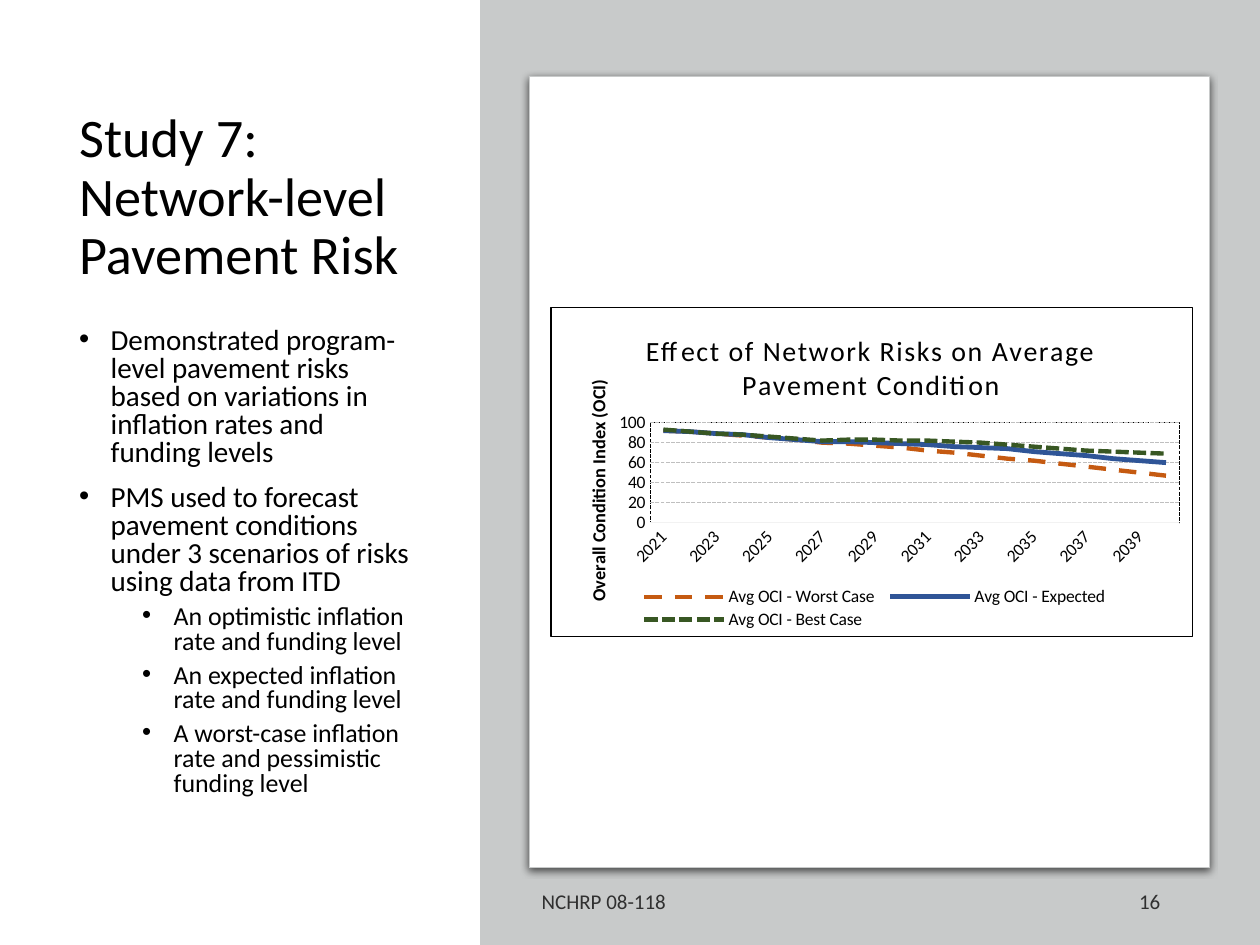
import collections

import lxml.etree
import pptx
import pptx.chart.data
import pptx.dml.color
import pptx.enum.chart
import pptx.enum.dml
import pptx.enum.shapes
import pptx.enum.text
import pptx.oxml
import pptx.oxml.ns
import pptx.util

Color = pptx.dml.color.RGBColor
BLACK = Color(0x00, 0x00, 0x00)
WHITE = Color(0xFF, 0xFF, 0xFF)
PANEL = Color(0xC8, 0xCA, 0xCA)
FOOTER = Color(0x30, 0x30, 0x30)
GRID_LINE = Color(0xBF, 0xBF, 0xBF)
AXIS_LINE = Color(0xF2, 0xF2, 0xF2)
ORANGE = Color(0xC5, 0x5A, 0x11)
BLUE = Color(0x2F, 0x55, 0x97)
GREEN = Color(0x38, 0x57, 0x23)

FONT = "Calibri"
CELL = 0.1
Box = collections.namedtuple("Box", "left top width height")
Dash = pptx.enum.dml.MSO_LINE
Anchor = pptx.enum.text.MSO_ANCHOR
Align = pptx.enum.text.PP_ALIGN

BULLETS = [
    (0, "Demonstrated program-level pavement risks based on variations in inflation rates and funding levels"),
    (0, "PMS used to forecast pavement conditions under 3 scenarios of risks using data from ITD"),
    (1, "An optimistic inflation rate and funding level"),
    (1, "An expected inflation rate and funding level"),
    (1, "A worst-case inflation rate and pessimistic funding level"),
]
SERIES = [
    ("Avg OCI - Worst Case", ORANGE, 2.5, Dash.DASH,
     [92, 91, 89, 87, 85, 83, 80, 79, 77, 75, 72, 70, 67, 64, 62, 59, 56, 53, 50, 47]),
    ("Avg OCI - Expected", BLUE, 2.75, Dash.SOLID,
     [92, 91, 89, 88, 85, 83, 81, 81, 80, 79, 78, 76, 75, 74, 71, 69, 67, 64, 62, 60]),
    ("Avg OCI - Best Case", GREEN, 2.5, Dash.SQUARE_DOT,
     [93, 91, 89, 88, 86, 84, 82, 83, 83, 82, 82, 81, 80, 78, 76, 74, 72, 71, 70, 69]),
]


def inside(box, left, top, width, height):
    """Return the box given by shares of another box."""
    return Box(box.left + left * box.width, box.top + top * box.height,
               width * box.width, height * box.height)


def lengths(box):
    """Turn grid columns and rows into slide lengths."""
    return [pptx.util.Inches(value * CELL) for value in box]


def parse_xml(text):
    """Parse markup that uses the chart and drawing prefixes."""
    names = pptx.oxml.ns.nsdecls("a", "c")
    return pptx.oxml.parse_xml(text.replace(">", f" {names}>", 1))


def format_font(font, size, color=BLACK, bold=False):
    """Set the face, size, colour and weight of a font."""
    font.name, font.size, font.bold = FONT, pptx.util.Pt(size), bold
    font.color.rgb = color


def add_text(page, box, lines, sizes, color=BLACK, anchor=Anchor.TOP, align=Align.LEFT,
             spacing=1.0, before=(0, 0), bullets=False):
    """Add a text box whose lines are pairs of level and wording."""
    frame = page.shapes.add_textbox(*lengths(box)).text_frame
    frame.word_wrap, frame.vertical_anchor = True, anchor
    for index, (level, words) in enumerate(lines):
        para = frame.paragraphs[0] if index == 0 else frame.add_paragraph()
        para.level, para.alignment, para.line_spacing = level, align, spacing
        para.space_before = pptx.util.Pt(before[level])
        span = para.add_run()
        span.text = words
        format_font(span.font, sizes[level], color)
        if bullets:
            properties = para._p.get_or_add_pPr()
            properties.set("marL", str(pptx.util.Inches(0.25 + 0.5 * level)))
            properties.set("indent", str(pptx.util.Inches(-0.25)))
            for mark in ('<a:buFont typeface="Arial"></a:buFont>', '<a:buChar char="•"></a:buChar>'):
                properties.append(parse_xml(mark))


def add_card(page, box, fill, kind, line=None):
    """Add a plain filled shape with an optional outline."""
    card = page.shapes.add_shape(kind, *lengths(box))
    card.shadow.inherit = False
    card.fill.solid()
    card.fill.fore_color.rgb = fill
    if line is None:
        card.line.fill.background()
    else:
        card.line.color.rgb, card.line.width = line, pptx.util.Pt(0.75)
    return card


def add_shadow(card):
    """Give a card a soft shadow below it."""
    effects = card._element.spPr.find(pptx.oxml.ns.qn("a:effectLst"))
    effects.append(parse_xml(
        '<a:outerShdw blurRad="57150" dist="19050" dir="5400000" algn="ctr" rotWithShape="0">'
        '<a:srgbClr val="000000"><a:alpha val="63000"/></a:srgbClr></a:outerShdw>'))


def set_layout(part, inner=False, **shares):
    """Place a chart part by shares of the chart."""
    target = '<c:layoutTarget val="inner"/>' if inner else ""
    modes = "".join(f'<c:{key}Mode val="edge"/>' for key in ("x", "y"))
    values = "".join(f'<c:{key} val="{value}"/>' for key, value in shares.items())
    layout = parse_xml(f"<c:layout><c:manualLayout>{target}{modes}{values}</c:manualLayout></c:layout>")
    for old in part.findall(pptx.oxml.ns.qn("c:layout")):
        part.remove(old)
    overlay = part.find(pptx.oxml.ns.qn("c:overlay"))
    if overlay is None:
        part.insert(0, layout)
    else:
        overlay.addprevious(layout)


def frame_markup(fill, dash):
    """Return chart properties with a thin black outline."""
    return parse_xml(f'<c:spPr>{fill}<a:ln w="9525"><a:solidFill><a:srgbClr val="{BLACK}"/></a:solidFill>'
                     f'<a:prstDash val="{dash}"/></a:ln></c:spPr>')


def add_title(title, words, size, bold, **place):
    """Write and place the title of a chart or an axis."""
    span = title.text_frame.paragraphs[0].add_run()
    span.text = words
    format_font(span.font, size, bold=bold)
    set_layout(title._element, **place)
    return span


def style_axes(chart):
    """Format the year axis and the index axis."""
    years, index = chart.category_axis, chart.value_axis
    for axis in (years, index):
        axis.major_tick_mark = axis.minor_tick_mark = pptx.enum.chart.XL_TICK_MARK.NONE
        format_font(axis.tick_labels.font, 10)
    years.format.line.color.rgb = AXIS_LINE
    years.format.line.width = pptx.util.Pt(0.75)
    years._element.find(".//" + pptx.oxml.ns.qn("a:bodyPr")).set("rot", "-2700000")
    years._element.find(pptx.oxml.ns.qn("c:noMultiLvlLbl")).addprevious(
        parse_xml('<c:tickLblSkip val="2"></c:tickLblSkip>'))
    index.minimum_scale, index.maximum_scale, index.major_unit = 0, 100, 20
    index.tick_labels.number_format, index.tick_labels.number_format_is_linked = "0", False
    index.format.line.fill.background()
    grid = index.major_gridlines.format.line
    grid.color.rgb, grid.width, grid.dash_style = GRID_LINE, pptx.util.Pt(0.75), Dash.SQUARE_DOT
    add_title(index.axis_title, "Overall Condition Index (OCI)", 10.5, True, x=0.05, y=0.21)


def add_condition_chart(page, box):
    """Add the line chart of pavement condition by year."""
    data = pptx.chart.data.CategoryChartData(number_format="0")
    data.categories = [str(year) for year in range(2021, 2041)]
    for name, _, _, _, values in SERIES:
        data.add_series(name, values)
    chart = page.shapes.add_chart(pptx.enum.chart.XL_CHART_TYPE.LINE, *lengths(box), data).chart
    format_font(chart.font, 10)
    for series, (_, color, width, dash, _) in zip(chart.plots[0].series, SERIES):
        series.smooth = False
        line = series.format.line
        line.color.rgb, line.width, line.dash_style = color, pptx.util.Pt(width), dash
    chart.plots[0].vary_by_categories = False
    style_axes(chart)
    span = add_title(chart.chart_title, "Effect of Network Risks on Average Pavement Condition",
                     16, False, x=0.14, y=0.06)
    span._r.get_or_add_rPr().set("spc", "100")
    chart.has_legend = True
    chart.legend.position = pptx.enum.chart.XL_LEGEND_POSITION.BOTTOM
    chart.legend.include_in_layout = False
    format_font(chart.legend.font, 10)
    set_layout(chart.legend._element, x=0.13, y=0.84, w=0.75, h=0.15)
    body = chart.element.find(pptx.oxml.ns.qn("c:chart"))
    plot = body.find(pptx.oxml.ns.qn("c:plotArea"))
    set_layout(plot, inner=True, x=0.155, y=0.35, w=0.825, h=0.305)
    plot.append(frame_markup("<a:noFill/>", "sysDash"))
    body.addnext(frame_markup(f'<a:solidFill><a:srgbClr val="{WHITE}"/></a:solidFill>', "solid"))


def add_study_column(page, box):
    """Add the study heading and its bullets."""
    add_text(page, inside(box, 0, 0, 1, 0.295), [(0, "Study 7: Network-level Pavement Risk")],
             [31], anchor=Anchor.MIDDLE, spacing=0.9)
    add_text(page, inside(box, 0, 0.311, 1, 0.689), BULLETS, [16.6, 14.8],
             spacing=0.8, before=(10, 5), bullets=True)


def add_chart_panel(page, box):
    """Add the grey panel with its card, chart and footer."""
    shapes = pptx.enum.shapes.MSO_SHAPE
    add_card(page, box, PANEL, shapes.RECTANGLE)
    card = add_card(page, inside(box, 0.063, 0.081, 0.872, 0.837), WHITE, shapes.ROUNDED_RECTANGLE, PANEL)
    card.adjustments[0] = 0
    add_shadow(card)
    add_condition_chart(page, inside(box, 0.09, 0.325, 0.824, 0.349))
    for left, width, words, align in ((0.063, 0.546, "NCHRP 08-118", Align.LEFT),
                                      (0.525, 0.363, "16", Align.RIGHT)):
        add_text(page, inside(box, left, 0.927, width, 0.053), [(0, words)], [12],
                 color=FOOTER, anchor=Anchor.MIDDLE, align=align)


def main():
    """Build the slide and save it."""
    deck = pptx.Presentation()
    deck.slide_width, deck.slide_height = pptx.util.Inches(10), pptx.util.Inches(7.5)
    page = deck.slides.add_slide(deck.slide_layouts[6])
    add_study_column(page, Box(5.3, 6.9, 28.8, 60.1))
    add_chart_panel(page, Box(38.1, 0, 61.9, 75))
    deck.save("out.pptx")


if __name__ == "__main__":
    main()
